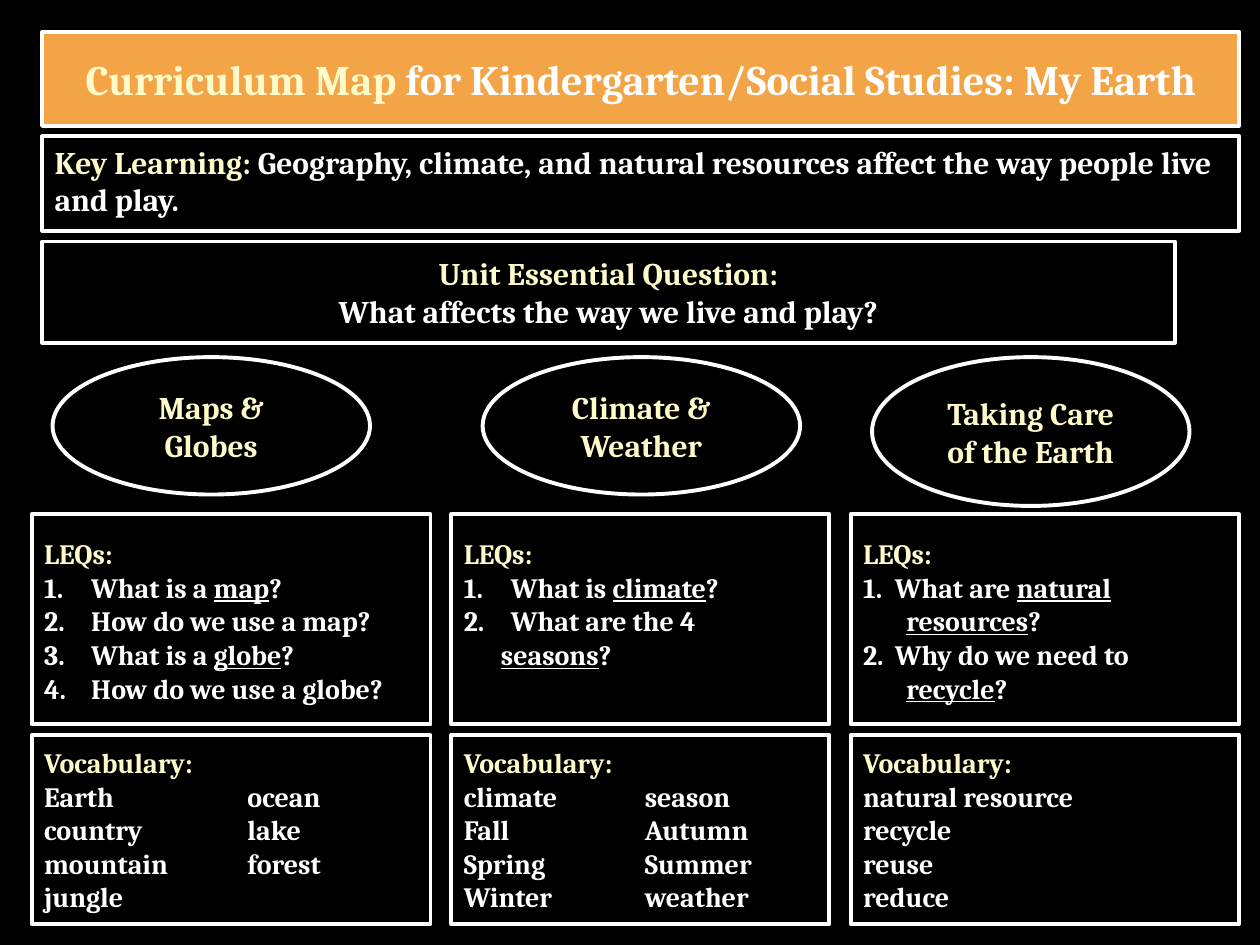
from lxml.etree import SubElement
from pptx import Presentation
from pptx.dml.color import RGBColor
from pptx.enum.shapes import MSO_SHAPE
from pptx.enum.text import MSO_ANCHOR, PP_ALIGN
from pptx.oxml.ns import qn
from pptx.util import Cm, Pt

COLORS = {"background": "000000", "banner": "F3A447", "heading": "FEFAC9", "body": "FFFFFF"}
FONT = "Cambria"

COLUMNS = [
    {
        "left": 0.64, "width": 8.04, "topic_left": 1.06, "topic_height": 2.77,
        "topic": ["Maps &", "Globes"],
        "questions": [
            ("auto", "What is a _map_?"),
            ("auto", "How do we use a map?"),
            ("auto", "What is a _globe_?"),
            ("auto", "How do we use a globe?"),
        ],
        "continuation": 0.95,
        "vocabulary": ["Earth\tocean", "country\tlake", "mountain\tforest", "jungle"],
        "tab": 4.1,
    },
    {
        "left": 9.1, "width": 7.62, "topic_left": 9.73, "topic_height": 2.77,
        "topic": ["Climate &", "Weather"],
        "questions": [
            ("auto", "What is _climate_?"),
            ("auto", "What are the 4"),
            ("continued", "_seasons_?"),
        ],
        "continuation": 0.75,
        "vocabulary": ["climate\tseason", "Fall\tAutumn", "Spring\tSummer", "Winter\tweather"],
        "tab": 3.65,
    },
    {
        "left": 17.15, "width": 7.83, "topic_left": 17.58, "topic_height": 3,
        "topic": ["Taking Care", "of the Earth"],
        "questions": [
            ("typed", "1.\tWhat are _natural_"),
            ("continued", "_resources_?"),
            ("typed", "2.\tWhy do we need to"),
            ("continued", "_recycle_?"),
        ],
        "continuation": 0.87,
        "vocabulary": ["natural resource", "recycle", "reuse", "reduce"],
        "tab": None,
    },
]
HANGING = {"auto": 0.95, "typed": 0.64}


def rgb(name):
    return RGBColor.from_string(COLORS[name])


def add_frame(slide, left, top, width, height, outline=MSO_SHAPE.RECTANGLE, fill=None):
    frame = slide.shapes.add_shape(outline, Cm(left), Cm(top), Cm(width), Cm(height))
    frame.shadow.inherit = False
    if fill:
        frame.fill.solid()
        frame.fill.fore_color.rgb = rgb(fill)
    else:
        frame.fill.background()
    frame.line.color.rgb = rgb("body")
    frame.line.width = Pt(2.25)
    frame.text_frame.word_wrap = True
    frame.text_frame.vertical_anchor = MSO_ANCHOR.MIDDLE
    return frame.text_frame


def add_words(paragraph, words, size, color):
    for index, piece in enumerate(words.split("_")):
        if piece:
            run = paragraph.add_run()
            run.text = piece
            run.font.name = FONT
            run.font.size = Pt(size)
            run.font.bold = True
            run.font.underline = index % 2 == 1
            run.font.color.rgb = rgb(color)


def add_line(text_frame, *parts, size, align=PP_ALIGN.LEFT):
    first = text_frame.paragraphs[0]
    paragraph = text_frame.add_paragraph() if first.runs else first
    paragraph.alignment = align
    for words, color in parts:
        add_words(paragraph, words, size, color)
    return paragraph


def set_indent(paragraph, left, hanging=0):
    properties = paragraph._p.get_or_add_pPr()
    properties.set("marL", str(Cm(left)))
    properties.set("indent", str(-Cm(hanging)))
    return properties


def add_topic(slide, column):
    topic = add_frame(slide, column["topic_left"], 7.2, 6.4, column["topic_height"], MSO_SHAPE.OVAL)
    for words in column["topic"]:
        add_line(topic, (words, "heading"), size=18, align=PP_ALIGN.CENTER)


def add_questions(slide, column):
    questions = add_frame(slide, column["left"], 10.37, column["width"], 4.23)
    questions.vertical_anchor = MSO_ANCHOR.TOP
    questions.margin_top = Cm(0.45)
    add_line(questions, ("LEQs:", "heading"), size=16)
    for kind, words in column["questions"]:
        paragraph = add_line(questions, (words, "body"), size=16)
        if kind == "continued":
            set_indent(paragraph, column["continuation"])
            continue
        properties = set_indent(paragraph, HANGING[kind], HANGING[kind])
        if kind == "auto":
            SubElement(properties, qn("a:buFont"), typeface=FONT)
            SubElement(properties, qn("a:buAutoNum"), type="arabicPeriod")


def add_vocabulary(slide, column):
    vocabulary = add_frame(slide, column["left"], 14.82, column["width"], 3.81)
    add_line(vocabulary, ("Vocabulary:", "heading"), size=16)
    for words in column["vocabulary"]:
        paragraph = add_line(vocabulary, (words, "body"), size=16)
        if "\t" in words:
            stops = SubElement(paragraph._p.get_or_add_pPr(), qn("a:tabLst"))
            SubElement(stops, qn("a:tab"), pos=str(Cm(column["tab"])), algn="l")


def add_header(slide):
    title = add_frame(slide, 0.85, 0.64, 24.13, 1.9, fill="banner")
    add_line(title, ("Curriculum Map ", "heading"),
             ("for Kindergarten/Social Studies: My Earth", "body"),
             size=24, align=PP_ALIGN.CENTER)

    learning = add_frame(slide, 0.85, 2.75, 24.13, 1.9)
    learning.vertical_anchor = MSO_ANCHOR.TOP
    add_line(learning, ("Key Learning: ", "heading"),
             ("Geography, climate, and natural resources affect the way people live and play.", "body"),
             size=18)

    essential = add_frame(slide, 0.85, 4.87, 22.83, 2.04)
    add_line(essential, ("Unit Essential Question:", "heading"), size=18, align=PP_ALIGN.CENTER)
    add_line(essential, ("What affects the way we live and play?", "body"),
             size=18, align=PP_ALIGN.CENTER)


def main():
    presentation = Presentation()
    presentation.slide_width = Cm(25.4)
    presentation.slide_height = Cm(19.05)
    slide = presentation.slides.add_slide(presentation.slide_layouts[6])
    slide.background.fill.solid()
    slide.background.fill.fore_color.rgb = rgb("background")
    add_header(slide)
    for column in COLUMNS:
        add_topic(slide, column)
        add_questions(slide, column)
        add_vocabulary(slide, column)
    presentation.save("out.pptx")


if __name__ == "__main__":
    main()
